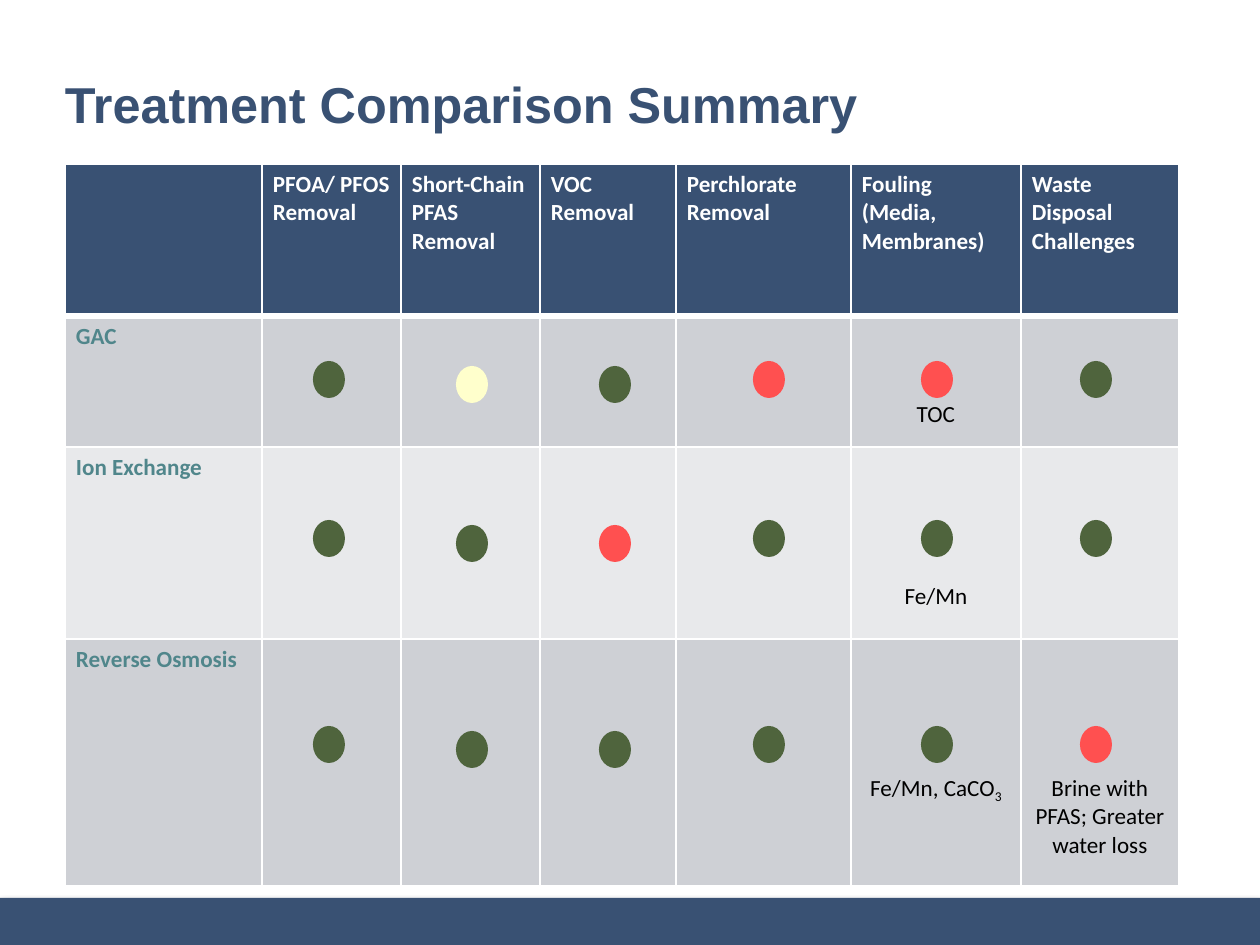
from dataclasses import dataclass

from lxml import etree
from pptx import Presentation
from pptx import util as u
from pptx.dml.color import RGBColor
from pptx.enum import shapes, text
from pptx.oxml import ns

PX = 6048


@dataclass(frozen=True)
class Theme:
    navy: str = "395173"
    teal: str = "50868B"
    white: str = "FFFFFF"
    black: str = "000000"
    bands: tuple = ("CED0D5", "E8E9EB")
    good: str = "4F643D"
    fair: str = "FFFFCC"
    poor: str = "FF5050"
    title_font: str = "Arial"
    body_font: str = "Calibri"
    title_size: int = 24
    body_size: int = 11
    line: int = 1
    heavy_line: int = 3


class Deck:
    """Draws styled elements on the current slide."""

    def __init__(self, theme, width, height):
        self.theme = theme
        self.prs = Presentation()
        self.prs.slide_width, self.prs.slide_height = width * PX, height * PX
        self.s = self.prs.slides.add_slide(self.prs.slide_layouts[6])

    def apply(self, obj, values):
        for name, value in values.items():
            setattr(obj, name, value)

    def child(self, parent, tag, **attrs):
        el = etree.SubElement(parent, ns.qn(tag))
        for name, value in attrs.items():
            el.set(name, str(value))
        return el

    def run(self, p, words, color, font, size, bold=False, sub=False):
        r = p.add_run()
        r.text = words
        self.apply(r.font, {"name": font, "size": u.Pt(size), "bold": bold})
        r.font.color.rgb = RGBColor.from_string(color)
        if sub:
            r._r.get_or_add_rPr().set("baseline", "-25000")

    def title(self, words, *box):
        t = self.theme
        tf = self.s.shapes.add_textbox(*(v * PX for v in box)).text_frame
        self.apply(tf, {"word_wrap": True, "margin_left": 0, "margin_right": 0,
                        "vertical_anchor": text.MSO_ANCHOR.MIDDLE})
        self.run(tf.paragraphs[0], words, t.navy, t.title_font, t.title_size, True)

    def shape(self, kind, color, *box):
        sp = self.s.shapes.add_shape(kind, *(v * PX for v in box))
        sp.shadow.inherit = False
        sp.fill.solid()
        sp.fill.fore_color.rgb = RGBColor.from_string(color)
        sp.line.fill.background()
        return sp

    def footer(self, *box):
        sp = self.shape(shapes.MSO_SHAPE.RECTANGLE, self.theme.navy, *box)
        effects = sp._element.spPr.find(ns.qn("a:effectLst"))
        shadow = self.child(effects, "a:outerShdw", blurRad=u.Pt(3.1), dist=u.Pt(1.8),
                            dir=5400000, rotWithShape=0)
        color = self.child(shadow, "a:srgbClr", val=self.theme.black)
        self.child(color, "a:alpha", val=35000)

    def dot(self, color, x, y):
        self.shape(shapes.MSO_SHAPE.OVAL, color, x, y, 32, 37)

    def table(self, x, y, widths, heights):
        frame = self.s.shapes.add_table(len(heights), len(widths), x * PX, y * PX,
                                        sum(widths) * PX, sum(heights) * PX)
        table = frame.table
        self.apply(table, {"first_row": False, "horz_banding": False})
        for col, width in zip(table.columns, widths):
            col.width = width * PX
        for row, height in zip(table.rows, heights):
            row.height = height * PX
        return table

    def cell(self, cell, fill, top_line, bottom_line):
        tcPr = cell._tc.get_or_add_tcPr()
        line = self.theme.line
        for side, width in zip("LRTB", (line, line, top_line, bottom_line)):
            ln = self.child(tcPr, f"a:ln{side}", w=u.Pt(width))
            self.child(self.child(ln, "a:solidFill"), "a:srgbClr", val=self.theme.white)
        cell.fill.solid()
        cell.fill.fore_color.rgb = RGBColor.from_string(fill)
        self.apply(cell, {"margin_left": 11 * PX, "margin_right": 11 * PX,
                          "margin_top": 6 * PX, "margin_bottom": 6 * PX})

    def label(self, cell, words, color):
        t = self.theme
        self.run(cell.text_frame.paragraphs[0], words, color, t.body_font, t.body_size, True)

    def note(self, cell, words, drop, subscript=""):
        t = self.theme
        cell.margin_top = drop * PX
        p = cell.text_frame.paragraphs[0]
        p.alignment = text.PP_ALIGN.CENTER
        self.run(p, words, t.black, t.body_font, t.body_size)
        if subscript:
            self.run(p, subscript, t.black, t.body_font, t.body_size, sub=True)


CRITERIA = ["", "PFOA/ PFOS Removal", "Short-Chain PFAS Removal", "VOC Removal",
            "Perchlorate Removal", "Fouling (Media, Membranes)",
            "Waste Disposal Challenges"]
TREATMENTS = [("GAC", 361, "GFGPPG"),
              ("Ion Exchange", 520, "GGPGGG"),
              ("Reverse Osmosis", 726, "GGGGGP")]
DOT_COLUMNS = [(313, 0), (456, 5), (599, 5), (753, 0), (921, 0), (1080, 0)]
NOTES = [(1, 5, "TOC", 84, ""), (2, 5, "Fe/Mn", 135, ""),
         (3, 5, "Fe/Mn, CaCO", 135, "3"),
         (3, 6, "Brine with PFAS; Greater water loss", 135, "")]


def main():
    t = Theme()
    deck = Deck(t, 1260, 945)
    deck.footer(0, 898, 1260, 47)
    deck.title("Treatment Comparison Summary", 65, 60, 1133, 86)

    table = deck.table(65, 164, [197, 139, 139, 136, 175, 170, 158], [152, 131, 192, 247])
    for col, criterion in enumerate(CRITERIA):
        deck.cell(table.cell(0, col), t.navy, t.line, t.heavy_line)
        if criterion:
            deck.label(table.cell(0, col), criterion, t.white)

    ratings = {"G": t.good, "F": t.fair, "P": t.poor}
    for row, (name, y, scores) in enumerate(TREATMENTS, 1):
        top_line = t.heavy_line if row == 1 else t.line
        for col in range(len(CRITERIA)):
            deck.cell(table.cell(row, col), t.bands[(row - 1) % 2], top_line, t.line)
        deck.label(table.cell(row, 0), name, t.teal)
        for (x, shift), score in zip(DOT_COLUMNS, scores):
            deck.dot(ratings[score], x, y + shift)

    for row, col, words, drop, subscript in NOTES:
        deck.note(table.cell(row, col), words, drop, subscript)
    deck.prs.save("out.pptx")


if __name__ == "__main__":
    main()
